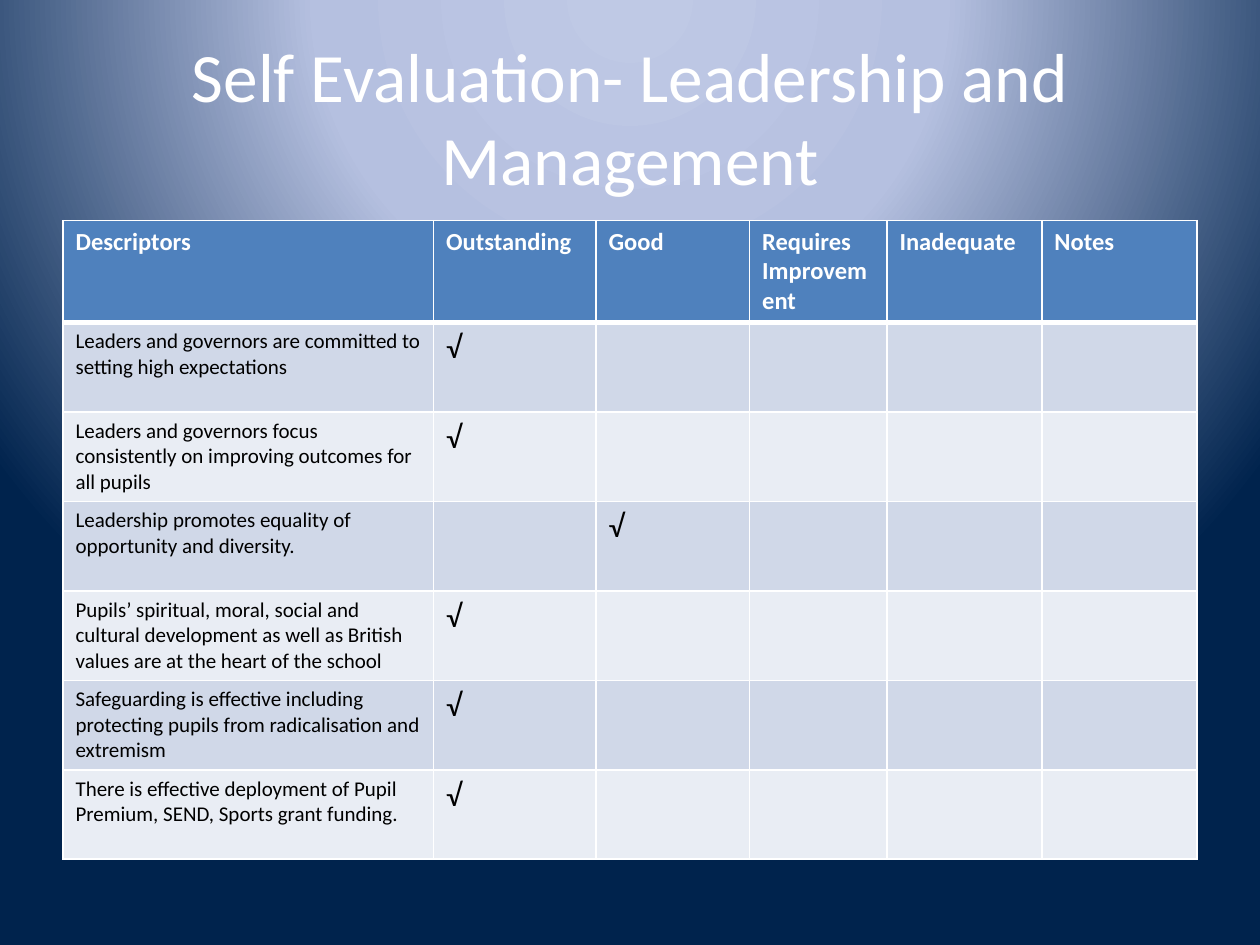
from lxml import etree
from pptx import Presentation
from pptx import util as u
from pptx.dml.color import RGBColor
from pptx.enum import text
from pptx.oxml import parse_xml
from pptx.oxml.ns import nsdecls, qn

COLORS = {
    "white": "FFFFFF", "black": "000000", "header": "4F81BD",
    "band_dark": "D0D8E8", "band_light": "E9EDF4",
    "glow": "BFC9E5", "haze": "B5C0E0", "navy": "00234D",
}
TITLE = {"size": u.Pt(39.6), "bold": False, "color": "white"}
HEADER = {"size": u.Pt(14), "bold": True, "color": "white"}
BODY = {"size": u.Pt(12), "bold": False, "color": "black"}
TICK = {"size": u.Pt(18), "bold": False, "color": "black"}

COLUMNS = [("Descriptors", 2.94), ("Outstanding", 1.29), ("Good", 1.22),
           ("Requires Improvement", 1.09), ("Inadequate", 1.23), ("Notes", 1.23)]
# Each descriptor with the column that holds its tick
RATINGS = [
    ("Leaders and governors are committed to setting high expectations", 1),
    ("Leaders and governors focus consistently on improving outcomes for all pupils", 1),
    ("Leadership promotes equality of opportunity and diversity.", 2),
    ("Pupils’ spiritual, moral, social and cultural development as well as "
     "British values are at the heart of the school", 1),
    ("Safeguarding is effective including protecting pupils from "
     "radicalisation and extremism", 1),
    ("There is effective deployment of Pupil Premium, SEND, Sports grant funding.", 1),
]


class Deck:
    """Holds the style and the current slide."""

    font = "Calibri"

    def __init__(self, prs):
        self.s = prs.slides.add_slide(prs.slide_layouts[5])

    def background(self, stops, focus):
        self.s.background.fill.gradient()
        old = self.s.element.find(".//" + qn("a:gradFill"))
        gs = "".join(f'<a:gs pos="{pos * 1000}"><a:srgbClr val="{COLORS[c]}"/></a:gs>'
                     for pos, c in stops)
        rect = " ".join(f'{side}="{v * 1000}"' for side, v in zip("ltrb", focus))
        old.getparent().replace(old, parse_xml(
            f'<a:gradFill {nsdecls("a")} rotWithShape="1"><a:gsLst>{gs}</a:gsLst>'
            f'<a:path path="circle"><a:fillToRect {rect}/></a:path></a:gradFill>'))

    def add_words(self, p, words, style):
        r = p.add_run()
        r.text = words
        r.font.color.rgb = RGBColor.from_string(COLORS[style["color"]])
        for name, value in {"name": self.font, "size": style["size"],
                            "bold": style["bold"]}.items():
            setattr(r.font, name, value)

    def title(self, words, box):
        sp = self.s.shapes.title
        for name, value in zip(("left", "top", "width", "height"), box):
            setattr(sp, name, u.Inches(value))
        tf = sp.text_frame
        for name, value in {"word_wrap": True, "auto_size": text.MSO_AUTO_SIZE.NONE,
                            "vertical_anchor": text.MSO_ANCHOR.MIDDLE}.items():
            setattr(tf, name, value)
        p = tf.paragraphs[0]
        p.alignment = text.PP_ALIGN.CENTER
        self.add_words(p, words, TITLE)

    def borders(self, cell, widths):
        tcPr = cell._tc.get_or_add_tcPr()
        for side, width in widths.items():
            ln = etree.SubElement(tcPr, qn("a:ln" + side), w=str(u.Pt(width)))
            fill = etree.SubElement(ln, qn("a:solidFill"))
            etree.SubElement(fill, qn("a:srgbClr"), val=COLORS["white"])

    def cell(self, cell, words, style, fill, widths):
        self.borders(cell, widths)
        cell.fill.solid()
        cell.fill.fore_color.rgb = RGBColor.from_string(COLORS[fill])
        if words:
            self.add_words(cell.text_frame.paragraphs[0], words, style)

    def table(self, left, top, header_height, row_height):
        widths = [w for _, w in COLUMNS]
        heights = [header_height] + [row_height] * len(RATINGS)
        box = [u.Inches(v) for v in (left, top, sum(widths), sum(heights))]
        table = self.s.shapes.add_table(len(heights), len(widths), *box).table
        for column, width in zip(table.columns, widths):
            column.width = u.Inches(width)
        for row, height in zip(table.rows, heights):
            row.height = u.Inches(height)

        # Header row, with a heavier rule below
        for i, (name, _) in enumerate(COLUMNS):
            self.cell(table.cell(0, i), name, HEADER, "header",
                      {"L": 1, "R": 1, "T": 1, "B": 3})

        # Banded rating rows
        for row, (descriptor, ticked) in enumerate(RATINGS, 1):
            fill = "band_dark" if row % 2 else "band_light"
            edges = {"L": 1, "R": 1, "T": 3 if row == 1 else 1, "B": 1}
            words = {0: descriptor, ticked: "√"}
            for i in range(len(COLUMNS)):
                self.cell(table.cell(row, i), words.get(i), TICK if i else BODY,
                          fill, edges)


def main():
    prs = Presentation()
    prs.slide_width, prs.slide_height = u.Inches(10), u.Inches(7.5)
    deck = Deck(prs)
    deck.background([(0, "glow"), (40, "haze"), (100, "navy")], (50, -80, 50, 180))
    deck.title("Self Evaluation- Leadership and Management", (0.5, 0.3, 9, 1.25))
    deck.table(0.5, 1.75, header_height=0.8, row_height=0.71)
    prs.save("out.pptx")


if __name__ == "__main__":
    main()
